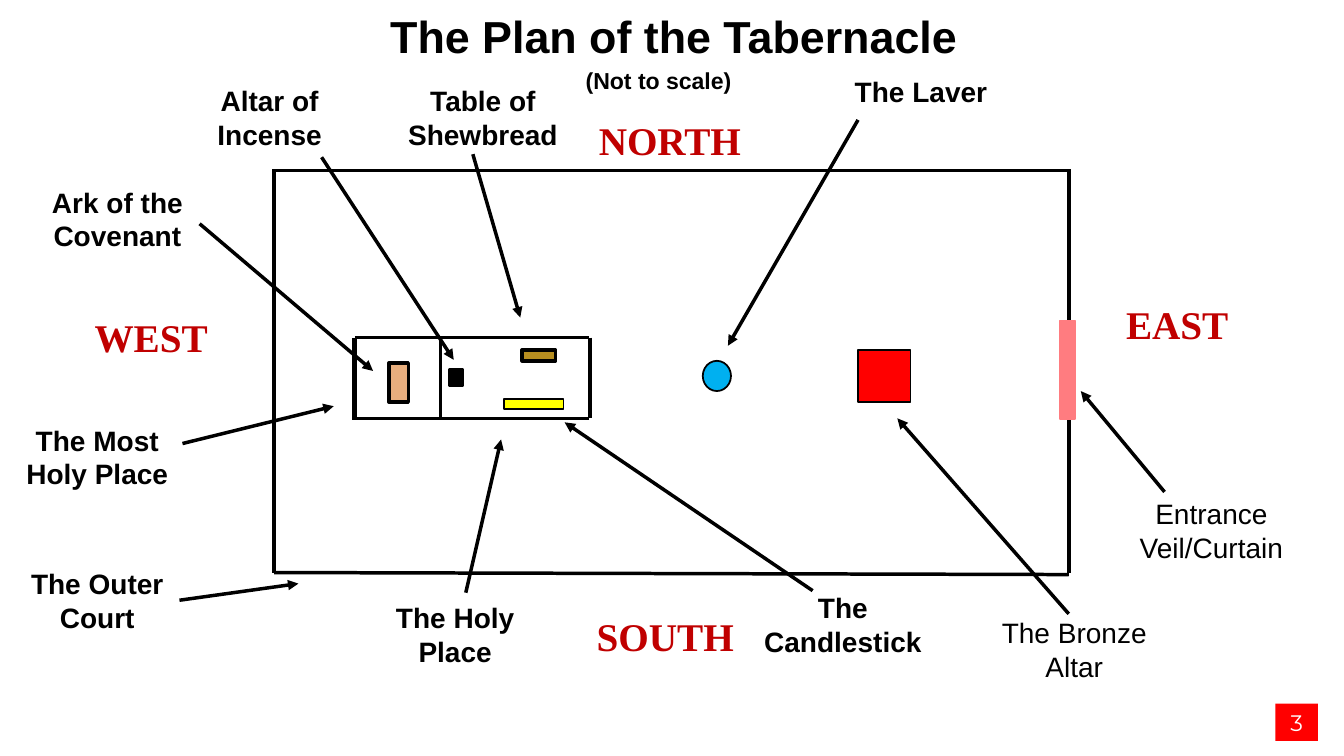
from lxml.etree import SubElement
from pptx import Presentation
from pptx.dml.color import RGBColor
from pptx.enum.shapes import MSO_CONNECTOR as Connector, MSO_SHAPE as Shape
from pptx.enum.text import MSO_ANCHOR as Anchor, MSO_AUTO_SIZE as AutoSize, PP_ALIGN as Align
from pptx.oxml.ns import qn
from pptx.util import Pt

SCALE = 9144
WIDTH, HEIGHT = 1333, 750
TITLE_ONLY = 5
RIGHT_SIDE = 3

BLACK = RGBColor(0x00, 0x00, 0x00)
WHITE = RGBColor(0xFF, 0xFF, 0xFF)
RED = RGBColor(0xFF, 0x00, 0x00)
DARK_RED = RGBColor(0xC0, 0x00, 0x00)
CURTAIN = RGBColor(0xFF, 0x7C, 0x80)
ARK = RGBColor(0xE8, 0xAE, 0x7E)
TABLE = RGBColor(0xB7, 0x8E, 0x20)
CANDLESTICK = RGBColor(0xFF, 0xFF, 0x00)
LAVER = RGBColor(0x00, 0xB0, 0xF0)


def px(*lengths):
    return [length * SCALE for length in lengths]


def write_text(frame, text, font="Arial", size=20, color=BLACK, bold=True,
               align=Align.CENTER, anchor=Anchor.TOP):
    frame.word_wrap = True
    frame.auto_size = AutoSize.NONE
    frame.vertical_anchor = anchor
    for index, line in enumerate(text.split("\n")):
        para = frame.add_paragraph() if index else frame.paragraphs[0]
        para.alignment = align
        span = para.add_run()
        span.text = line
        span.font.name = font
        span.font.size = Pt(size)
        span.font.bold = bold
        span.font.color.rgb = color


class Plan:
    def __init__(self, deck):
        self.page = deck.slides.add_slide(deck.slide_layouts[TITLE_ONLY])
        self.shapes = self.page.shapes

    def title(self, text, left, top, width, height):
        box = self.shapes.title
        box.left, box.top, box.width, box.height = px(left, top, width, height)
        box.fill.solid()
        box.fill.fore_color.rgb = WHITE
        write_text(box.text_frame, text, size=32)
        box.text_frame.margin_top = 8 * SCALE

    def label(self, text, left, top, width, height, **style):
        box = self.shapes.add_textbox(*px(left, top, width, height))
        write_text(box.text_frame, text, **style)
        return box

    def block(self, fill, left, top, width, height, weight=1.25, kind=Shape.RECTANGLE,
              edge=BLACK):
        box = self.shapes.add_shape(kind, *px(left, top, width, height))
        box.shadow.inherit = False
        box.fill.solid()
        box.fill.fore_color.rgb = fill
        if edge is None:
            box.line.fill.background()
        else:
            box.line.color.rgb = edge
            box.line.width = Pt(weight)
        return box

    def wall(self, *ends, weight=2.5):
        line = self.shapes.add_connector(Connector.STRAIGHT, *px(*ends))
        line.line.color.rgb = BLACK
        line.line.width = Pt(weight)
        SubElement(line.element.spPr, qn("a:effectLst"))
        return line

    def arrow(self, *ends):
        line = self.wall(*ends)
        outline = line.element.spPr.find(qn("a:ln"))
        SubElement(outline, qn("a:tailEnd"), type="triangle")
        return line


def main():
    deck = Presentation()
    deck.slide_width, deck.slide_height = px(WIDTH, HEIGHT)
    plan = Plan(deck)
    plan.title("The Plan of the Tabernacle", 2, 1, 1333, 125)

    court_walls = [(271, 169, 1060, 169), (1060, 168, 1060, 568),
                   (272, 568, 1060, 570), (272, 168, 272, 568)]
    tent_walls = [(352, 335, 584, 335), (352, 415, 584, 415),
                  (585, 335, 585, 415), (437, 335, 437, 415)]
    for ends in court_walls + tent_walls:
        plan.wall(*ends)
    plan.wall(352, 335, 352, 417, weight=3.5)

    plan.block(CURTAIN, 1051, 318, 15, 98, edge=CURTAIN)
    plan.block(ARK, 386, 360, 19, 39, weight=2.5)
    plan.block(BLACK, 446, 367, 13, 15, weight=2.5)
    plan.block(TABLE, 518, 347, 33, 11, weight=2.5)
    plan.block(CANDLESTICK, 500, 396, 59, 10)
    plan.block(LAVER, 697, 358, 28, 30, kind=Shape.OVAL)
    plan.block(RED, 851, 347, 52, 52)

    directions = [("NORTH", 584, 110, 172), ("EAST", 1107, 293, 132),
                  ("SOUTH", 582, 603, 163), ("WEST", 84, 306, 144)]
    for text, left, top, width in directions:
        plan.label(text, left, top, width, 57, font="Times New Roman", size=28,
                   color=DARK_RED, align=Align.LEFT)

    callouts = [
        ("The Laver", (832, 69, 163, 44), True, (851, 119, 722, 343)),
        ("Entrance\nVeil/Curtain", (1112, 488, 179, 77), False, (1155, 488, 1072, 388)),
        ("The Bronze Altar", (978, 606, 175, 77), False, (1060, 609, 890, 415)),
        ("The Candlestick", (745, 581, 182, 77), True, (806, 586, 560, 419)),
        ("The Holy Place", (370, 591, 163, 77), True, (462, 588, 497, 436)),
        ("The Most Holy Place", (15, 415, 163, 77), True, (181, 440, 331, 403)),
        ("Ark of the Covenant", (35, 179, 163, 77), True, (198, 222, 370, 368)),
        ("Altar of Incense", (186, 78, 163, 77), True, (319, 156, 450, 357)),
        ("Table of Shewbread", (392, 78, 174, 77), True, (469, 153, 516, 315)),
    ]
    for text, place, bold, ends in callouts:
        plan.arrow(*ends)
        plan.label(text, *place, bold=bold)

    outer_court = plan.label("The Outer Court", 15, 557, 163, 77)
    plan.arrow(178, 595, 296, 579).begin_connect(outer_court, RIGHT_SIDE)

    number = plan.block(RED, 1265, 698, 42, 37, edge=None)
    write_text(number.text_frame, "3", font="Montserrat", size=16, color=WHITE,
               bold=False, anchor=Anchor.MIDDLE)
    plan.label("(Not to scale)", 571, 61, 183, 38, size=16.5, align=Align.LEFT)

    deck.save("out.pptx")


if __name__ == "__main__":
    main()
